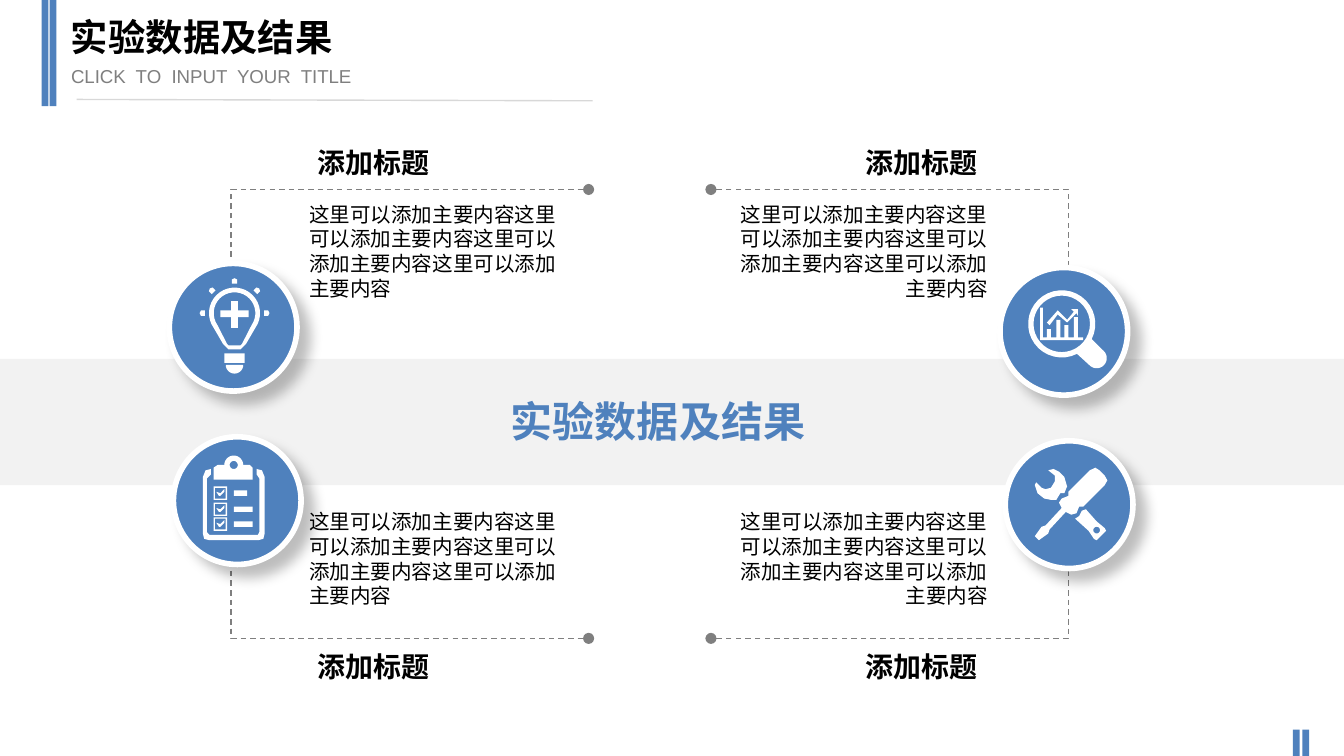
from dataclasses import dataclass
from math import cos, radians, sin

from lxml.etree import SubElement
from pptx import Presentation
from pptx.dml.color import RGBColor
from pptx.enum.dml import MSO_LINE
from pptx.enum.shapes import MSO_CONNECTOR, MSO_SHAPE
from pptx.enum.text import PP_ALIGN
from pptx.oxml.ns import qn
from pptx.util import Inches, Pt

BLUE = RGBColor(0x4F, 0x81, 0xBD)
WHITE = RGBColor(0xFF, 0xFF, 0xFF)
BLACK = RGBColor(0, 0, 0)
GRAY = RGBColor(0x7F, 0x7F, 0x7F)
RULE_GRAY = RGBColor(0xD8, 0xD8, 0xD8)
BAND_GRAY = RGBColor(0xF2, 0xF2, 0xF2)
TITLE = "实验数据及结果"
TOPIC = "添加标题"
DETAIL = "这里可以添加主要内容" * 4
BADGE = 0.95
Outline = list[tuple[float, float]]


@dataclass
class Topic:
    badge: tuple[float, float]
    icon: list[Outline]
    bracket: Outline
    heading: tuple[float, float]
    detail: tuple[float, float]
    align: PP_ALIGN


def arc(x: float, y: float, radius: float, start: int = 0, end: int = 360) -> Outline:
    steps = max(2, (end - start) // 10)
    angles = [radians(start + (end - start) * i / steps) for i in range(steps + 1)]
    return [(x + radius * cos(a), y + radius * sin(a)) for a in angles]


def box(left: float, top: float, right: float, bottom: float) -> Outline:
    return [(left, top), (right, top), (right, bottom), (left, bottom)]


def ray(x: float, y: float, angle: int) -> Outline:
    c, s = cos(radians(angle)), sin(radians(angle))
    corners = [(0.22, -0.02), (0.25, -0.02), (0.26, 0), (0.25, 0.02), (0.22, 0.02)]
    return [(x + r * c - w * s, y + r * s + w * c) for r, w in corners]


def bulb_icon() -> list[Outline]:
    x, y = 1.745, 2.33
    glass = arc(x, y, 0.19, 145, 395) + [(1.83, 2.56), (1.79, 2.6), (1.7, 2.6), (1.66, 2.56)]
    hollow = arc(x, y, 0.155, 145, 395) + [(1.8, 2.56), (1.79, 2.57), (1.7, 2.57), (1.69, 2.56)]
    plus = [(1.72, 2.24), (1.77, 2.24), (1.77, 2.31), (1.85, 2.31), (1.85, 2.36), (1.77, 2.36),
            (1.77, 2.44), (1.72, 2.44), (1.72, 2.36), (1.64, 2.36), (1.64, 2.31), (1.72, 2.31)]
    socket = [box(1.67, 2.63, 1.82, 2.7), arc(x, 2.715, 0.065, 0, 180)]
    return [glass, hollow, plus, *socket, *(ray(x, y, a) for a in (180, 225, 270, 315, 360))]


def checklist_icon() -> list[Outline]:
    frame = [(1.57, 3.49), (1.53, 3.5), (1.51, 3.55), (1.51, 3.97), (1.52, 4.01), (1.56, 4.02),
             (1.92, 4.02), (1.96, 4.01), (1.97, 3.97), (1.97, 3.55), (1.95, 3.5), (1.91, 3.49),
             (1.91, 3.53), (1.93, 3.56), (1.93, 3.96), (1.92, 3.98), (1.56, 3.98), (1.54, 3.96),
             (1.54, 3.56), (1.57, 3.53)]
    clip = [(1.59, 3.57), (1.59, 3.48), (1.62, 3.46), *arc(1.74, 3.46, 0.07, 180, 360),
            (1.86, 3.46), (1.88, 3.48), (1.88, 3.57)]
    outlines = [frame, clip, arc(1.74, 3.46, 0.03)]
    for y, bar_end in ((3.62, 1.84), (3.74, 1.88), (3.85, 1.88)):
        tick = [(1.61, y + 0.04), (1.64, y + 0.05), (1.67, y + 0.02), (1.67, y + 0.04),
                (1.64, y + 0.07), (1.63, y + 0.07)]
        outlines += [box(1.59, y, 1.69, y + 0.1), box(1.6, y + 0.01, 1.68, y + 0.09), tick,
                     box(1.74, y + 0.03, bar_end, y + 0.07)]
    return outlines


def magnifier_icon() -> list[Outline]:
    rim = arc(7.9, 2.41, 0.25, 63, 387) + arc(8.16, 2.665, 0.075, -45, 135)
    axes = [(7.74, 2.29), (7.76, 2.29), (7.76, 2.51), (8.06, 2.51), (8.06, 2.53), (7.74, 2.53)]
    trend = [(7.79, 2.4), (7.87, 2.31), (7.94, 2.38), (7.99, 2.32), (7.97, 2.3), (8.02, 2.3),
             (8.02, 2.35), (8.01, 2.33), (7.94, 2.4), (7.87, 2.34), (7.81, 2.42)]
    columns = [box(x, top, x + 0.03, 2.51)
               for x, top in ((7.79, 2.45), (7.86, 2.38), (7.92, 2.42), (7.99, 2.36))]
    return [rim, arc(7.9, 2.41, 0.21), axes, trend, *columns]


def tools_icon() -> list[Outline]:
    jaw = [(7.8, 3.5), (7.85, 3.54), (7.85, 3.58), (7.82, 3.63), (7.78, 3.64), (7.75, 3.63),
           (7.71, 3.59), (7.7, 3.61), (7.72, 3.67), (7.77, 3.71), (7.82, 3.72), (7.86, 3.72),
           (7.89, 3.67), (7.92, 3.67), (7.94, 3.62), (7.92, 3.55), (7.88, 3.51), (7.84, 3.49)]
    handle = [(8.05, 3.8), (8.08, 3.79), (8.16, 3.88), (8.22, 3.93), (8.23, 3.95), (8.16, 4.02),
              (8.14, 4.01), (8.1, 3.95), (8, 3.86), (8.03, 3.84)]
    driver = [(8.22, 3.54), (8.18, 3.5), (8.15, 3.48), (8.11, 3.5), (7.95, 3.66), (7.95, 3.69),
              (7.9, 3.71), (7.88, 3.74), (7.9, 3.78), (7.78, 3.91), (7.75, 3.92), (7.7, 3.99),
              (7.73, 4.02), (7.8, 3.97), (7.81, 3.94), (7.93, 3.81), (7.97, 3.83), (8.01, 3.82),
              (8.03, 3.77), (8.06, 3.77), (8.22, 3.61), (8.24, 3.575)]
    return [jaw, handle, arc(8.16, 3.945, 0.025), driver]


def add_outlines(outlines: list[Outline], closed: bool = True):
    builder = None
    for outline in outlines:
        first, *rest = [(Inches(x), Inches(y)) for x, y in outline]
        if builder is None:
            builder = slide.shapes.build_freeform(*first)
        else:
            builder.move_to(*first)
        builder.add_line_segments(rest, close=closed)
    drawing = builder.convert_to_shape()
    drawing.shadow.inherit = False
    return drawing


def add_solid(kind: MSO_SHAPE, left: float, top: float, width: float, height: float,
              color: RGBColor):
    solid = slide.shapes.add_shape(kind, Inches(left), Inches(top), Inches(width), Inches(height))
    solid.shadow.inherit = False
    solid.fill.solid()
    solid.fill.fore_color.rgb = color
    solid.line.fill.background()
    return solid


def add_label(text: str, left: float, top: float, width: float, height: float, size: float,
              color: RGBColor = BLACK, bold: bool = False, align: PP_ALIGN = PP_ALIGN.LEFT,
              inset: tuple[float, float] = (0.07, 0.04), wrap: bool = True) -> None:
    frame = slide.shapes.add_textbox(
        Inches(left), Inches(top), Inches(width), Inches(height)).text_frame
    frame.word_wrap = wrap
    frame.margin_left = frame.margin_right = Inches(inset[0])
    frame.margin_top = frame.margin_bottom = Inches(inset[1])
    paragraph = frame.paragraphs[0]
    paragraph.text = text
    paragraph.alignment = align
    paragraph.font.name = "Arial"
    paragraph.font.size = Pt(size)
    paragraph.font.bold = bold
    paragraph.font.color.rgb = color


def add_bracket(points: Outline) -> None:
    bracket = add_outlines([points], closed=False)
    bracket.fill.background()
    bracket.line.color.rgb = GRAY
    bracket.line.width = Pt(0)
    bracket.line.dash_style = MSO_LINE.DASH
    stroke = bracket._element.spPr.find(qn("a:ln"))
    for end in ("a:headEnd", "a:tailEnd"):
        SubElement(stroke, qn(end), type="oval")


def add_badge(left: float, top: float, icon: list[Outline]) -> None:
    badge = add_solid(MSO_SHAPE.OVAL, left, top, BADGE, BADGE, BLUE)
    badge.line.color.rgb = WHITE
    badge.line.width = Pt(3)
    effects = badge._element.spPr.find(qn("a:effectLst"))
    shadow = SubElement(effects, qn("a:outerShdw"), blurRad=str(Pt(7)), dist=str(Pt(8)),
                        dir="2700000", algn="tl", rotWithShape="0")
    tint = SubElement(shadow, qn("a:srgbClr"), val="000000")
    SubElement(tint, qn("a:alpha"), val="25000")
    symbol = add_outlines(icon)
    symbol.fill.solid()
    symbol.fill.fore_color.rgb = WHITE
    symbol.line.fill.background()


LEFT, RIGHT = PP_ALIGN.LEFT, PP_ALIGN.RIGHT
TOPICS = [
    Topic((1.26, 1.96), bulb_icon(), [(1.72, 2.02), (1.72, 1.41), (4.38, 1.41)],
          (2.29, 1.04), (2.23, 1.46), LEFT),
    Topic((7.44, 1.99), magnifier_icon(), [(7.95, 2.02), (7.95, 1.41), (5.29, 1.41)],
          (5.9, 1.04), (5.3, 1.46), RIGHT),
    Topic((1.29, 3.25), checklist_icon(), [(1.72, 4.14), (1.72, 4.75), (4.38, 4.75)],
          (2.29, 4.79), (2.23, 3.75), LEFT),
    Topic((7.48, 3.28), tools_icon(), [(7.95, 4.14), (7.95, 4.75), (5.29, 4.75)],
          (5.9, 4.79), (5.3, 3.75), RIGHT),
]

deck = Presentation()
deck.slide_width, deck.slide_height = Inches(10), Inches(10 * 9 / 16)
slide = deck.slides.add_slide(deck.slide_layouts[6])

for x, y, height in ((0.31, 0, 0.79), (0.37, 0, 0.79), (9.62, 5.43, 0.2), (9.69, 5.43, 0.2)):
    add_solid(MSO_SHAPE.RECTANGLE, x, y, 0.05, height, BLUE)
rule = slide.shapes.add_connector(
    MSO_CONNECTOR.STRAIGHT, Inches(0.57), Inches(0.74), Inches(4.41), Inches(0.75))
rule.line.color.rgb = RULE_GRAY
rule.line.width = Pt(0.75)
SubElement(rule._element.spPr, qn("a:effectLst"))
add_label("CLICK  TO  INPUT  YOUR  TITLE", 0.43, 0.43, 3.15, 0.27, 10, GRAY, inset=(0.1, 0.05))
add_label(TITLE, 0.43, 0.06, 4.04, 0.5, 20, bold=True, inset=(0.1, 0.05))

add_solid(MSO_SHAPE.RECTANGLE, 0, 2.67, 10, 0.94, BAND_GRAY)
for topic in TOPICS:
    add_bracket(topic.bracket)
add_label(TITLE, 3.73, 2.9, 2.36, 0.45, 22.5, BLUE, bold=True, wrap=False)
for topic in TOPICS:
    add_badge(*topic.badge, topic.icon)
    add_label(TOPIC, *topic.heading, 1.44, 0.33, 15, bold=True, align=topic.align)
    add_label(DETAIL, *topic.detail, 2.12, 0.82, 11, align=topic.align)

deck.save("out.pptx")
